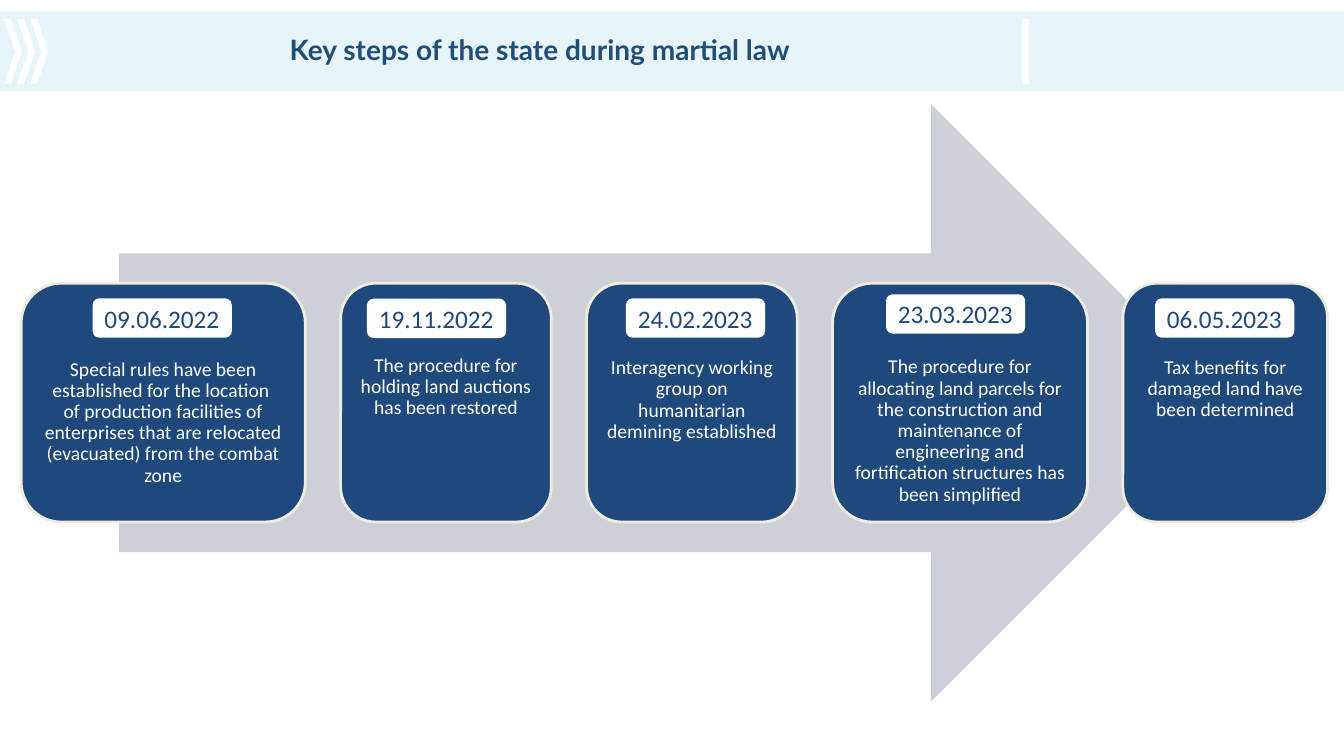
from lxml import etree
from pptx import Presentation
from pptx.dml.color import RGBColor
from pptx.enum.shapes import MSO_SHAPE
from pptx.enum.text import MSO_ANCHOR, PP_ALIGN
from pptx.oxml.ns import qn
from pptx.util import Pt

RECT = MSO_SHAPE.RECTANGLE
ROUND = MSO_SHAPE.ROUNDED_RECTANGLE
ARROW = MSO_SHAPE.RIGHT_ARROW
LEFT, CENTER = PP_ALIGN.LEFT, PP_ALIGN.CENTER
TOP, MIDDLE = MSO_ANCHOR.TOP, MSO_ANCHOR.MIDDLE

COLORS = {
    "band": "DCEFF7",
    "white": "FFFFFF",
    "arrow": "CDD0D7",
    "card": "1F497D",
    "edge": "EEECE1",
    "title": "1F4E79",
}

# Card row: left edge, top, height and the gap between cards
START, ROW, TALL, GAP = 15.1, 202.3, 170.6, 25.2

# Card width, text top, text, date, date left, date top
STEPS = [
    (203, 256.5, "Special rules have been established for the location \v"
     "of production facilities of enterprises that are relocated "
     "(evacuated) from the combat zone", "09.06.2022", 66.2, 213.1),
    (150.5, 254, "The procedure for holding land auctions has been restored",
     "19.11.2022", 262.1, 213.4),
    (150.5, 255.5, "Interagency working group on humanitarian demining "
     "established", "24.02.2023", 447.1, 213.1),
    (182.2, 255, "The procedure for allocating land parcels for the "
     "construction and maintenance of engineering and fortification "
     "structures has been simplified", "23.03.2023", 632.9, 210.2),
    (146.2, 255.5, "Tax benefits for damaged land have been determined",
     "06.05.2023", 825.1, 213.1),
]


def rgb(name):
    return RGBColor.from_string(COLORS[name])


def paint(shape, fill, line=None):
    shape.shadow.inherit = False
    shape.fill.solid()
    shape.fill.fore_color.rgb = rgb(fill)
    if line:
        shape.line.color.rgb = rgb(line)
        shape.line.width = Pt(2)
    else:
        shape.line.fill.background()


def block(slide, kind, x, y, w, h, fill, line=None):
    shape = slide.shapes.add_shape(kind, Pt(x), Pt(y), Pt(w), Pt(h))
    paint(shape, fill, line)
    return shape


def write(shape, text, size, color, font="Calibri", bold=False, align=CENTER,
          anchor=TOP, space=1.0, side=0, edge=0):
    frame = shape.text_frame
    frame.word_wrap = True
    frame.vertical_anchor = anchor
    frame.margin_left = frame.margin_right = Pt(side)
    frame.margin_top = frame.margin_bottom = Pt(edge)
    para = frame.paragraphs[0]
    para.text = text
    para.alignment = align
    para.line_spacing = space
    para.font.name = font
    para.font.size = Pt(size)
    para.font.bold = bold
    para.font.color.rgb = rgb(color)


def label(slide, x, y, w, h, text, size, color, **form):
    box = slide.shapes.add_textbox(Pt(x), Pt(y), Pt(w), Pt(h))
    write(box, text, size, color, **form)


def marks(slide):
    """Three chevrons and a bar, as one outline."""
    top, mid, low = 13.7, 36.7, 59.8
    shapes = [
        [(x + 13, mid), (x + 5, top), (x, top), (x + 8, mid), (x, low),
         (x + 5, low)]
        for x in (2.9, 12.25, 21.6)
    ]
    shapes.append([(735.1, top), (730.1, top), (730.1, low), (735.1, low)])
    paths = [[(Pt(x), Pt(y)) for x, y in path] for path in shapes]
    build = slide.shapes.build_freeform(*paths[0][0])
    for i, path in enumerate(paths):
        if i:
            build.move_to(*path[0])
        build.add_line_segments(path[1:], close=True)
    paint(build.convert_to_shape(), "white")


def header(slide):
    band = block(slide, RECT, 0, 8.4, 960, 56.6, "band")
    tint = band.fill._xPr.find(qn("a:solidFill"))[0]
    etree.SubElement(tint, qn("a:alpha")).set("val", "66000")
    marks(slide)
    label(slide, 38.9, 23, 693.4, 24.5,
          "Key steps of the state during martial law", 20, "title",
          font="Lato", bold=True)


def card(slide, x, w, top, text):
    block(slide, ROUND, x, ROW, w, TALL, "card", "edge")
    pad = 0.0488 * min(w, TALL)  # keeps text inside the round corners
    label(slide, x + pad, top, w - 2 * pad, ROW + TALL - pad - top,
          text, 14, "white", space=0.9, side=4.3)


def badge(slide, x, y, date):
    pill = block(slide, ROUND, x, y, 99.4, 28.1, "white")
    write(pill, date, 18, "card", align=LEFT, anchor=MIDDLE,
          side=7.2, edge=3.6)


def main():
    deck = Presentation()
    deck.slide_width, deck.slide_height = Pt(960), Pt(540)
    slide = deck.slides.add_slide(deck.slide_layouts[6])

    header(slide)
    block(slide, ARROW, 85, 74.2, 793.4, 427, "arrow")

    # Steps from left to right
    x = START
    for w, top, text, date, left, high in STEPS:
        card(slide, x, w, top, text)
        badge(slide, left, high, date)
        x += w + GAP

    deck.save("out.pptx")


if __name__ == "__main__":
    main()
